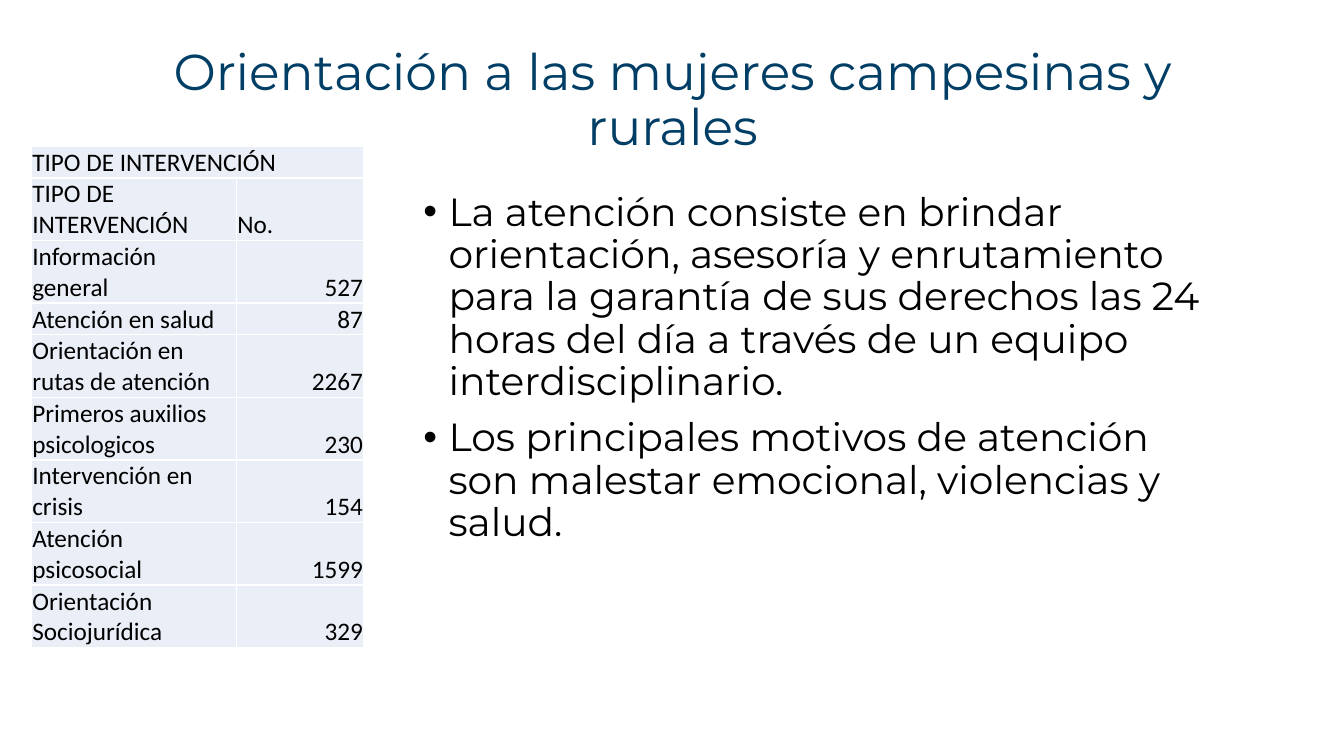
from dataclasses import dataclass

from lxml import etree
from pptx import Presentation
from pptx.dml.color import RGBColor
from pptx.enum.text import MSO_ANCHOR, MSO_AUTO_SIZE, PP_ALIGN
from pptx.oxml.ns import qn
from pptx.util import Inches, Pt

LEFT, CENTER, RIGHT = PP_ALIGN.LEFT, PP_ALIGN.CENTER, PP_ALIGN.RIGHT
TOP, MIDDLE, BOTTOM = MSO_ANCHOR.TOP, MSO_ANCHOR.MIDDLE, MSO_ANCHOR.BOTTOM
NO_AUTOFIT = MSO_AUTO_SIZE.NONE

SLIDE_WIDTH, SLIDE_HEIGHT = Inches(13.33), Inches(7.5)
GRID_COLUMNS, GRID_ROWS = 12, 9
NAVY, BLACK, WHITE, PALE_BLUE = "003E65", "000000", "FFFFFF", "EAEFF7"


@dataclass(frozen=True)
class Box:
    """A place on the slide, in grid columns and rows."""
    left: float
    top: float
    width: float
    height: float


@dataclass(frozen=True)
class TextStyle:
    font: str
    size: float
    color: str


@dataclass(frozen=True)
class Intervention:
    kind: str
    count: str


TITLE_BOX = Box(0.83, 0.34, 10.35, 1.74)
BODY_BOX = Box(3.69, 2.23, 7.28, 5.38)
TABLE_BOX = Box(0.28, 1.74, 2.97, 2.25)
TABLE_COLUMNS = (1.83, 1.14)

TITLE_STYLE = TextStyle("Montserrat", 36, NAVY)
BODY_STYLE = TextStyle("Montserrat", 28, BLACK)
TABLE_STYLE = TextStyle("Calibri", 18, BLACK)

TITLE = "Orientación a las mujeres campesinas y rurales"
POINTS = (
    "La atención consiste en brindar orientación, asesoría y enrutamiento para la "
    "garantía de sus derechos las 24 horas del día a través de un equipo "
    "interdisciplinario.",
    "Los principales motivos de atención son malestar emocional, violencias y salud.",
)
TABLE_HEADING = "TIPO DE INTERVENCIÓN"
INTERVENTIONS = (
    Intervention(TABLE_HEADING, "No."),
    Intervention("Información general", "527"),
    Intervention("Atención en salud", "87"),
    Intervention("Orientación en rutas de atención", "2267"),
    Intervention("Primeros auxilios psicologicos", "230"),
    Intervention("Intervención en crisis", "154"),
    Intervention("Atención psicosocial", "1599"),
    Intervention("Orientación Sociojurídica", "329"),
)


def columns(count: float) -> int:
    return round(SLIDE_WIDTH * count / GRID_COLUMNS)


def rows(count: float) -> int:
    return round(SLIDE_HEIGHT * count / GRID_ROWS)


def rgb(color: str) -> RGBColor:
    return RGBColor.from_string(color)


def place(shape, box: Box) -> None:
    shape.left, shape.top = columns(box.left), rows(box.top)
    shape.width, shape.height = columns(box.width), rows(box.height)


def format_paragraph(paragraph, style: TextStyle, alignment) -> None:
    paragraph.alignment = alignment
    for run in paragraph.runs:
        run.font.name = style.font
        run.font.size = Pt(style.size)
        run.font.color.rgb = rgb(style.color)


def add_bullet(paragraph) -> None:
    properties = paragraph._p.get_or_add_pPr()
    properties.set("marL", str(Inches(0.25)))
    properties.set("indent", str(-Inches(0.25)))
    etree.SubElement(properties, qn("a:buFont")).set("typeface", "Arial")
    etree.SubElement(properties, qn("a:buChar")).set("char", "•")


def fill_placeholder(shape, box: Box, text: str, anchor) -> None:
    place(shape, box)
    text_frame = shape.text_frame
    text_frame.text = text
    text_frame.word_wrap = True
    text_frame.auto_size = NO_AUTOFIT
    text_frame.vertical_anchor = anchor
    for paragraph in text_frame.paragraphs:
        paragraph.line_spacing = 0.9


def add_title(slide) -> None:
    shape = slide.shapes.title
    fill_placeholder(shape, TITLE_BOX, TITLE, MIDDLE)
    format_paragraph(shape.text_frame.paragraphs[0], TITLE_STYLE, CENTER)


def add_points(slide) -> None:
    shape = slide.placeholders[1]
    fill_placeholder(shape, BODY_BOX, "\n".join(POINTS), TOP)
    for index, paragraph in enumerate(shape.text_frame.paragraphs):
        paragraph.space_before = Pt(10 if index else 0)
        add_bullet(paragraph)
        format_paragraph(paragraph, BODY_STYLE, LEFT)


def add_borders(cell, color: str) -> None:
    properties = cell._tc.get_or_add_tcPr()
    for side in ("lnL", "lnR", "lnT", "lnB"):
        line = etree.SubElement(properties, qn(f"a:{side}"), w=str(Pt(1)))
        fill = etree.SubElement(line, qn("a:solidFill"))
        etree.SubElement(fill, qn("a:srgbClr"), val=color)


def format_cell(cell, text: str) -> None:
    cell.text = text
    cell.margin_left = cell.margin_right = cell.margin_top = Inches(0.01)
    cell.margin_bottom = 0
    cell.vertical_anchor = BOTTOM
    add_borders(cell, WHITE)
    cell.fill.solid()
    cell.fill.fore_color.rgb = rgb(PALE_BLUE)
    alignment = RIGHT if text.isdigit() else LEFT
    format_paragraph(cell.text_frame.paragraphs[0], TABLE_STYLE, alignment)


def add_intervention_table(slide) -> None:
    box = TABLE_BOX
    table = slide.shapes.add_table(
        len(INTERVENTIONS) + 1, len(TABLE_COLUMNS),
        columns(box.left), rows(box.top), columns(box.width), rows(box.height),
    ).table
    table.first_row = table.horz_banding = False
    for column, width in zip(table.columns, TABLE_COLUMNS):
        column.width = columns(width)
    table.cell(0, 0).merge(table.cell(0, 1))
    format_cell(table.cell(0, 0), TABLE_HEADING)
    for row, intervention in enumerate(INTERVENTIONS, start=1):
        format_cell(table.cell(row, 0), intervention.kind)
        format_cell(table.cell(row, 1), intervention.count)


def main() -> None:
    presentation = Presentation()
    presentation.slide_width = SLIDE_WIDTH
    presentation.slide_height = SLIDE_HEIGHT
    slide = presentation.slides.add_slide(presentation.slide_layouts[1])
    add_title(slide)
    add_points(slide)
    add_intervention_table(slide)
    presentation.save("out.pptx")


if __name__ == "__main__":
    main()
